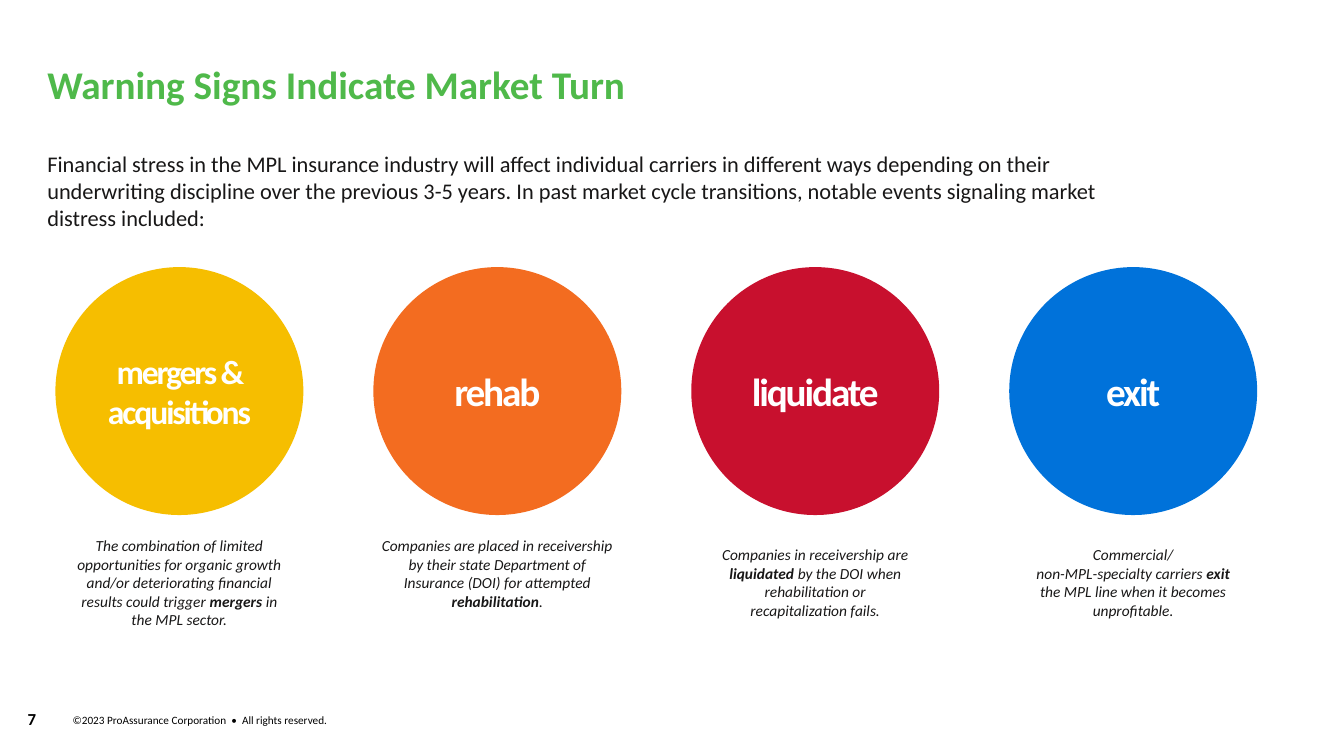
import lxml.etree
import pptx
import pptx.dml.color
import pptx.enum.shapes
import pptx.enum.text
import pptx.oxml.ns
import pptx.util
from dataclasses import dataclass

Pt = pptx.util.Pt
ALIGN = pptx.enum.text.PP_ALIGN
ANCHOR = pptx.enum.text.MSO_ANCHOR

TITLE = "Warning Signs Indicate Market Turn"
INTRO = (
    "Financial stress in the MPL insurance industry will affect individual carriers "
    "in different ways depending on their underwriting discipline over the previous "
    "3-5 years. In past market cycle transitions, notable events signaling market "
    "distress included:"
)
COPYRIGHT = "©2023 ProAssurance Corporation  •  All rights reserved."
PAGE_NUMBER = "7"

# Label, label size, label height, colour, caption (lead, bold word, tail),
# caption top, caption width, caption height; \v is a line break in a paragraph
SIGNS = [
    ("mergers & acquisitions", 24, 58, "F6BE00",
     ("The combination of limited opportunities for organic growth and/or "
      "deteriorating financial results could trigger ", "mergers", " in the MPL sector."),
     383, 152.6, 78),
    ("rehab", 28, 34, "F36C20",
     ("Companies are placed in receivership by their state Department of Insurance "
      "(DOI) for attempted ", "rehabilitation", "."),
     383, 169.2, 53),
    ("liquidate", 28, 34, "C8102E",
     ("Companies in receivership are ", "liquidated",
      " by the DOI when rehabilitation or recapitalization fails."),
     389.5, 142.6, 53),
    ("exit", 28, 34, "0072DA",
     ("Commercial/\vnon-MPL-specialty carriers ", "exit",
      " the MPL line when it becomes unprofitable."),
     389.5, 152.6, 53),
]


@dataclass(frozen=True)
class Theme:
    font: str = "Calibri"
    green: str = "4FB94A"
    ink: str = "181717"
    black: str = "000000"
    white: str = "FFFFFF"
    title_size: float = 28
    intro_size: float = 16
    caption_size: float = 11
    number_size: float = 12
    copyright_size: float = 8
    label_tracking: int = -150


THEME = Theme()
CIRCLE_LEFT, CIRCLE_TOP, DIAMETER, PITCH = 39.6, 190.8, 177.1, 227.1


def rgb(code):
    return pptx.dml.color.RGBColor.from_string(code)


def format_runs(para, size, color, bold=None, italic=None):
    """Format every run, and size line breaks to match; bold=None keeps each run's weight."""
    for span in para.runs:
        span.font.name = THEME.font
        span.font.size = Pt(size)
        span.font.color.rgb = rgb(color)
        if bold is not None:
            span.font.bold = bold
        span.font.italic = italic
    for line_break in para._p.findall(pptx.oxml.ns.qn("a:br")):
        for old in list(line_break):
            line_break.remove(old)
        lxml.etree.SubElement(line_break, pptx.oxml.ns.qn("a:rPr"), sz=str(size * 100))


def set_frame(frame, anchor, vertical_inset=0):
    frame.word_wrap = True
    frame.auto_size = pptx.enum.text.MSO_AUTO_SIZE.NONE
    frame.vertical_anchor = anchor
    frame.margin_left = frame.margin_right = 0
    frame.margin_top = frame.margin_bottom = Pt(vertical_inset)


def add_text(page, area, text, size, color, align=ALIGN.LEFT, anchor=ANCHOR.MIDDLE, bold=None):
    box = page.shapes.add_textbox(*map(Pt, area))
    set_frame(box.text_frame, anchor)
    box.text_frame.text = text
    para = box.text_frame.paragraphs[0]
    para.alignment = align
    format_runs(para, size, color, bold)
    return para


def add_title(page):
    title = page.shapes.title
    title.left, title.top, title.width, title.height = map(Pt, (33.8, 34.6, 866, 55.4))
    set_frame(title.text_frame, ANCHOR.MIDDLE, 7.2)
    title.text_frame.text = TITLE
    para = title.text_frame.paragraphs[0]
    para.alignment = ALIGN.LEFT
    para.line_spacing = 0.9
    format_runs(para, THEME.title_size, THEME.green, bold=True)


def add_circle(page, left, color):
    circle = page.shapes.add_shape(
        pptx.enum.shapes.MSO_SHAPE.OVAL,
        Pt(left), Pt(CIRCLE_TOP), Pt(DIAMETER), Pt(DIAMETER))
    circle.shadow.inherit = False
    circle.fill.solid()
    circle.fill.fore_color.rgb = rgb(color)
    circle.line.fill.background()


def add_label(page, left, text, size, height):
    top = CIRCLE_TOP + (DIAMETER - height) / 2
    para = add_text(page, (left, top, DIAMETER, height), text, size, THEME.white,
                    ALIGN.CENTER, bold=True)
    for span in para.runs:
        span.font._element.set("spc", str(THEME.label_tracking))


def add_caption(page, center, parts, top, width, height):
    lead, keyword, tail = parts
    para = add_text(page, (center - width / 2, top, width, height), lead,
                    THEME.caption_size, THEME.ink, ALIGN.CENTER, ANCHOR.TOP)
    bold_span = para.add_run()
    bold_span.text = keyword
    bold_span.font.bold = True
    para.add_run().text = tail
    format_runs(para, THEME.caption_size, THEME.ink, italic=True)


def main():
    deck = pptx.Presentation()
    deck.slide_width, deck.slide_height = Pt(960), Pt(540)
    page = deck.slides.add_slide(deck.slide_layouts.get_by_name("Title Only"))

    add_title(page)
    add_text(page, (33.8, 107.3, 786.2, 83.5), INTRO, THEME.intro_size, THEME.ink,
             anchor=ANCHOR.TOP)

    for index, sign in enumerate(SIGNS):
        label, size, label_height, color, parts, top, width, height = sign
        left = CIRCLE_LEFT + index * PITCH
        add_circle(page, left, color)
        add_label(page, left, label, size, label_height)
        add_caption(page, left + DIAMETER / 2, parts, top, width, height)

    add_text(page, (51.8, 509.8, 300, 9.4), COPYRIGHT, THEME.copyright_size, THEME.black)
    add_text(page, (0, 502.6, 45.4, 21.6), PAGE_NUMBER, THEME.number_size, THEME.black,
             ALIGN.CENTER, bold=True)
    deck.save("out.pptx")


if __name__ == "__main__":
    main()
